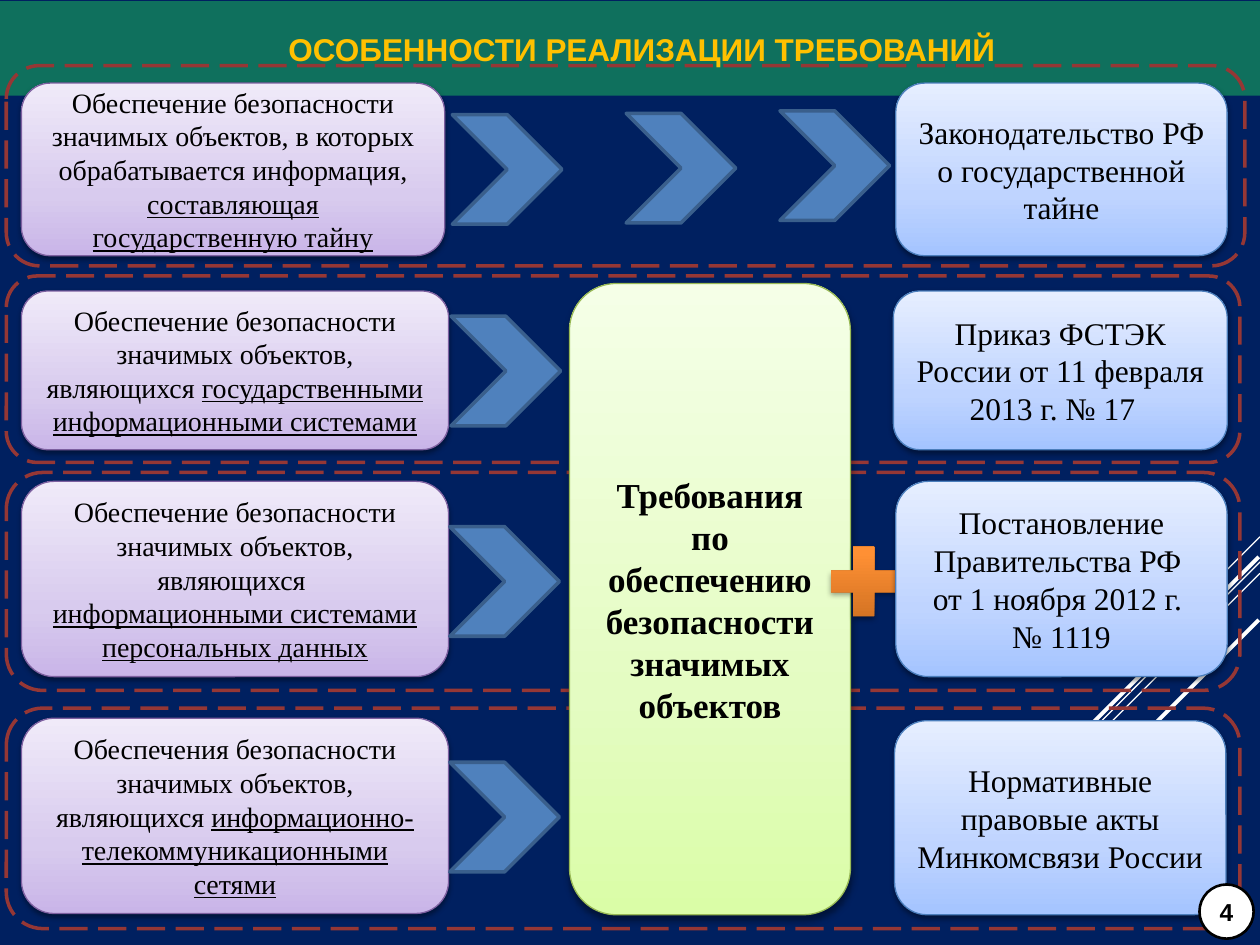
from dataclasses import dataclass

from lxml.etree import SubElement
from pptx import Presentation
from pptx.dml.color import RGBColor
from pptx.enum.dml import MSO_LINE
from pptx.enum.shapes import MSO_CONNECTOR, MSO_SHAPE
from pptx.enum.text import MSO_ANCHOR, PP_ALIGN
from pptx.oxml.ns import qn
from pptx.util import Inches, Pt

SERIF = "Times New Roman"
SANS = "Arial"


@dataclass(frozen=True)
class Area:
    left: float
    top: float
    width: float
    height: float


@dataclass(frozen=True)
class Span:
    text: str
    underline: bool = False


@dataclass(frozen=True)
class Font:
    name: str
    size: float
    color: str = "000000"
    bold: bool = False


@dataclass(frozen=True)
class Shadow:
    opacity: int
    blur: float
    distance: float


@dataclass(frozen=True)
class Card:
    stops: tuple
    outline: str | None
    shadow: Shadow


@dataclass(frozen=True)
class Row:
    frame: Area
    source: Area
    subject: str
    emphasis: str
    rule: Area
    rule_lines: tuple
    chevrons: tuple


SOFT = Shadow(38, 3.1, 1.6)
PURPLE = Card(((0, "C9B5E8"), (35, "D8CBEE"), (100, "F0EAF9")), "7D60A0", SOFT)
BLUE = Card(((0, "A4C4FF"), (35, "BFD4FF"), (100, "E6EEFF")), "4B7EBC", SOFT)
GREEN = Card(((0, "DAFDA7"), (35, "E4FCC2"), (100, "F5FFE7")), "98B955", Shadow(40, 4, 3))
ORANGE = Card(((0, "CC6E20"), (80, "FF9034"), (100, "FF9136")), None, Shadow(35, 3.1, 1.8))

ROWS = (
    Row(Area(0.05, 0.52, 9.83, 1.59), Area(0.17, 0.66, 3.36, 1.37),
        "Обеспечение безопасности значимых объектов, в которых обрабатывается информация, ",
        "составляющая государственную тайну", Area(7.11, 0.66, 2.63, 1.37),
        ("Законодательство РФ ", "о государственной тайне"),
        ((3.59, 0.91), (4.97, 0.9), (6.19, 0.88))),
    Row(Area(0.05, 2.19, 9.79, 1.48), Area(0.17, 2.31, 3.39, 1.26),
        "Обеспечение безопасности значимых объектов, являющихся ",
        "государственными информационными системами", Area(7.09, 2.31, 2.65, 1.26),
        ("Приказ ФСТЭК России от 11 февраля 2013 г. № 17  ",),
        ((3.58, 2.51),)),
    Row(Area(0.05, 3.75, 9.79, 1.73), Area(0.17, 3.82, 3.39, 1.55),
        "Обеспечение безопасности значимых объектов, являющихся  ",
        "информационными системами персональных данных", Area(7.11, 3.82, 2.63, 1.55),
        ("Постановление Правительства РФ ", "от 1 ноября 2012 г. ", "№ 1119"),
        ((3.57, 4.18),)),
    Row(Area(0.05, 5.62, 9.79, 1.75), Area(0.17, 5.7, 3.39, 1.55),
        "Обеспечения безопасности значимых объектов, являющихся ",
        "информационно-телекоммуникационными сетями", Area(7.1, 5.72, 2.63, 1.54),
        ("Нормативные правовые акты Минкомсвязи России",),
        ((3.57, 6.05),)),
)

RAYS = (
    (10, 4.26, 9.17, 5.09, 0.75),
    (10, 4.46, 7.3, 7.17, 0.75),
    (10, 4.55, 8.28, 6.27, 0.75),
    (9.99, 4.42, 8.42, 5.99, 2.25),
    (9.99, 4.92, 8.85, 6.06, 2.25),
)


def paint(target, color: str) -> None:
    target.solid()
    target.fore_color.rgb = RGBColor.from_string(color)


def add_box(page, kind, area: Area, fill: str | None = None,
            outline: str | None = None, weight: float = 0.75):
    box = page.shapes.add_shape(kind, Inches(area.left), Inches(area.top),
                                Inches(area.width), Inches(area.height))
    box.shadow.inherit = False
    if fill:
        paint(box.fill, fill)
    else:
        box.fill.background()
    if outline:
        paint(box.line.fill, outline)
        box.line.width = Pt(weight)
    else:
        box.line.fill.background()
    return box


def add_color(parent, color: str):
    return SubElement(parent, qn("a:srgbClr"), val=color)


def add_card(page, kind, area: Area, card: Card):
    box = add_box(page, kind, area, outline=card.outline)
    box.fill.gradient()
    box.fill.gradient_angle = 90
    properties = box._element.spPr
    stop_list = properties.find(qn("a:gradFill")).find(qn("a:gsLst"))
    for stop in list(stop_list):
        stop_list.remove(stop)
    for position, color in card.stops:
        add_color(SubElement(stop_list, qn("a:gs"), pos=str(position * 1000)), color)
    shadow = SubElement(properties.find(qn("a:effectLst")), qn("a:outerShdw"),
                        blurRad=str(Pt(card.shadow.blur)), dist=str(Pt(card.shadow.distance)),
                        dir="5400000", rotWithShape="0")
    SubElement(add_color(shadow, "000000"), qn("a:alpha"), val=str(card.shadow.opacity * 1000))
    return box


def write(box, paragraphs: list[list[Span]], font: Font, wrap: bool = True) -> None:
    frame = box.text_frame
    frame.word_wrap = wrap
    frame.vertical_anchor = MSO_ANCHOR.MIDDLE
    for index, spans in enumerate(paragraphs):
        para = frame.add_paragraph() if index else frame.paragraphs[0]
        para.alignment = PP_ALIGN.CENTER
        for span in spans:
            run = para.add_run()
            run.text = span.text
            run.font.name = font.name
            run.font.size = Pt(font.size)
            run.font.bold = font.bold
            run.font.underline = span.underline
            run.font.color.rgb = RGBColor.from_string(font.color)


def add_ray(page, x1: float, y1: float, x2: float, y2: float, weight: float) -> None:
    ray = page.shapes.add_connector(MSO_CONNECTOR.STRAIGHT, Inches(x1), Inches(y1),
                                    Inches(x2), Inches(y2))
    paint(ray.line.fill, "FFFFFF")
    ray.line.width = Pt(weight)
    SubElement(ray._element.spPr, qn("a:effectLst"))


def add_title(page) -> None:
    title = add_box(page, MSO_SHAPE.RECTANGLE, Area(0, 0.01, 10, 0.75), "0F705D")
    frame = title.text_frame
    frame.margin_left = frame.margin_right = Inches(0.05)
    write(title, [[Span("ОСОБЕННОСТИ РЕАЛИЗАЦИИ ТРЕБОВАНИЙ")]], Font(SANS, 18, "FFC000", True))
    frame.paragraphs[0]._p.get_or_add_pPr().set("marL", str(Inches(0.19)))


def add_frame(page, area: Area) -> None:
    frame = add_box(page, MSO_SHAPE.ROUNDED_RECTANGLE, area, outline="953735", weight=2)
    frame.line.dash_style = MSO_LINE.LONG_DASH


def add_row(page, row: Row) -> None:
    source = add_card(page, MSO_SHAPE.ROUNDED_RECTANGLE, row.source, PURPLE)
    write(source, [[Span(row.subject), Span(row.emphasis, True)]], Font(SERIF, 16))
    rule = add_card(page, MSO_SHAPE.ROUNDED_RECTANGLE, row.rule, BLUE)
    write(rule, [[Span(line)] for line in row.rule_lines], Font(SERIF, 18))
    for left, top in row.chevrons:
        add_box(page, MSO_SHAPE.CHEVRON, Area(left, top, 0.87, 0.87), "4F81BD", "3A5F8C", 2)


def main() -> None:
    deck = Presentation()
    deck.slide_width, deck.slide_height = Inches(10), Inches(7.5)
    page = deck.slides.add_slide(deck.slide_layouts[6])
    paint(page.background.fill, "002060")
    for ray in RAYS:
        add_ray(page, *ray)
    add_title(page)
    for row in ROWS:
        add_frame(page, row.frame)
    center = add_card(page, MSO_SHAPE.ROUNDED_RECTANGLE, Area(4.52, 2.25, 2.23, 5.01), GREEN)
    write(center, [[Span("Требования")],
                   [Span("по обеспечению безопасности значимых объектов")]],
          Font(SERIF, 20, bold=True))
    add_card(page, MSO_SHAPE.MATH_PLUS, Area(6.5, 4.24, 0.71, 0.75), ORANGE)
    for row in ROWS:
        add_row(page, row)
    badge = add_box(page, MSO_SHAPE.STAR_16_POINT, Area(9.52, 7.02, 0.43, 0.43),
                    "FFFFFF", "000000", 1.5)
    badge.adjustments[0] = 0.5
    write(badge, [[Span("4")]], Font(SANS, 14, bold=True), wrap=False)
    deck.save("out.pptx")


if __name__ == "__main__":
    main()
